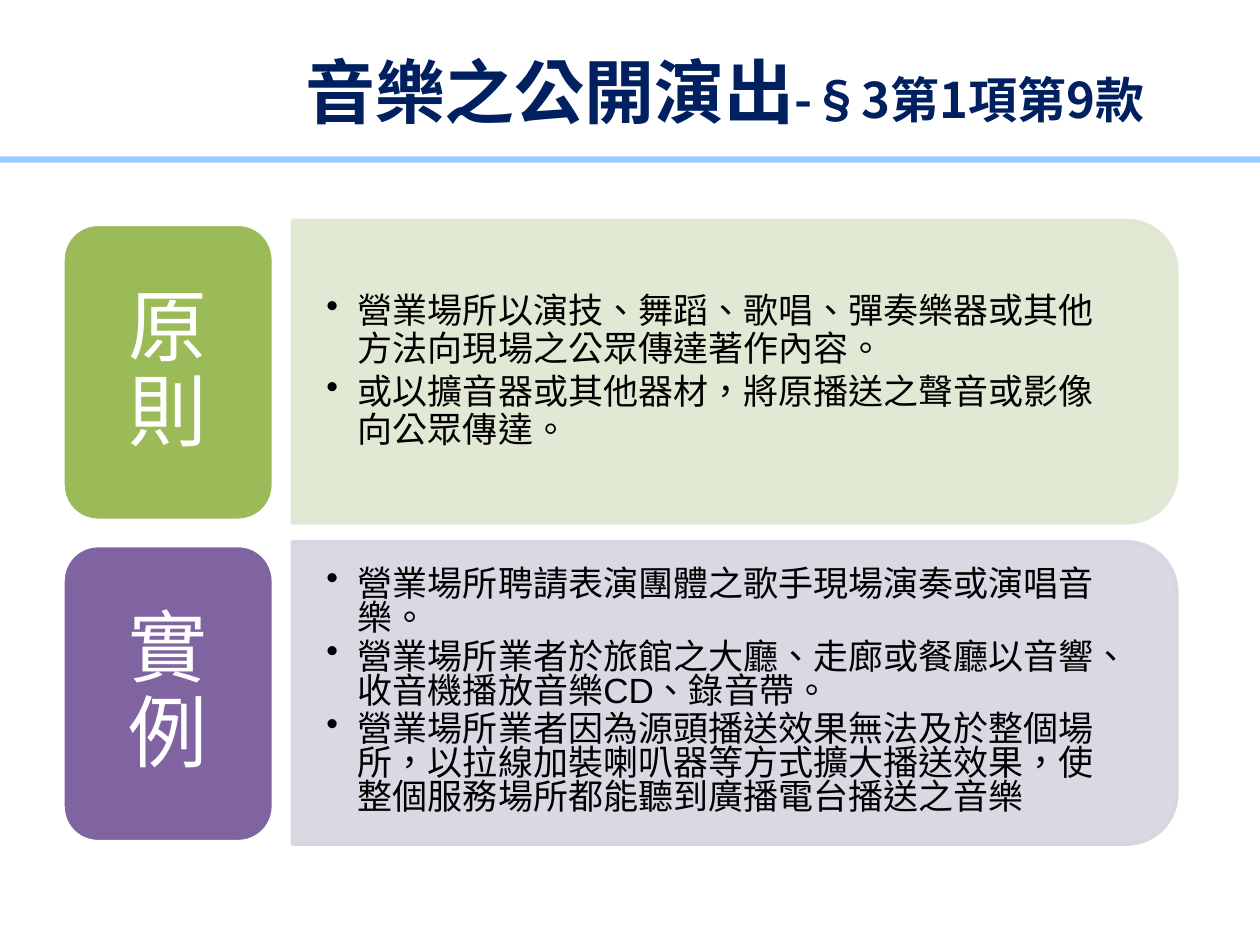
from lxml.etree import SubElement
from pptx import Presentation
from pptx.dml.color import RGBColor
from pptx.enum.lang import MSO_LANGUAGE_ID
from pptx.enum.shapes import MSO_SHAPE
from pptx.enum.text import MSO_ANCHOR, PP_ALIGN
from pptx.oxml.ns import qn
from pptx.util import Inches, Pt

HUES = {
    "navy": "002060", "sky": "99CCFF", "white": "FFFFFF", "black": "000000",
    "green": "9BBB59", "mint": "DEE7D1", "purple": "8064A2", "lilac": "D8D3E0",
}
TITLE = [("音樂之公開演出", 40), ("-§3第1項第9款", 28)]
ROWS = [
    ("原則", "green", "mint", 0.9, [
        "營業場所以演技、舞蹈、歌唱、彈奏樂器或其他方法向現場之公眾傳達著作內容。",
        "或以擴音器或其他器材，將原播送之聲音或影像向公眾傳達。",
    ]),
    ("實例", "purple", "lilac", 0.8, [
        "營業場所聘請表演團體之歌手現場演奏或演唱音樂。",
        "營業場所業者於旅館之大廳、走廊或餐廳以音響、收音機播放音樂CD、錄音帶。",
        "營業場所業者因為源頭播送效果無法及於整個場所，以拉線加裝喇叭器等方式擴大播送效果，使整個服務場所都能聽到廣播電台播送之音樂",
    ]),
]
TOP, STEP = 1.78, 2.55


def apply(item, form):
    for name, value in form.items():
        setattr(item, name, value)


def color(name):
    return RGBColor.from_string(HUES[name])


def place(item, box):
    apply(item, dict(zip(("left", "top", "width", "height"), map(Inches, box))))


def paint(part, name, alpha):
    part.solid()
    part.fore_color.rgb = color(name)
    if alpha < 100:
        tint = part._xPr.find(qn("a:solidFill"))[0]
        SubElement(tint, qn("a:alpha"), val=str(alpha * 1000))


def add_form(slide, kind, box, fill, edge=None, alpha=100, turn=0):
    form = slide.shapes.add_shape(kind, *map(Inches, box))
    form.shadow.inherit = False
    form.rotation = turn
    paint(form.fill, fill, alpha)
    if edge:
        paint(form.line.fill, edge, alpha)
        form.line.width = Pt(2)
    else:
        form.line.fill.background()


def add_text(slide, box, inset, lines, size, hue, para, dot=False):
    frame = slide.shapes.add_textbox(*map(Inches, box)).text_frame
    wide, high = map(Inches, inset)
    apply(frame, {
        "word_wrap": True, "vertical_anchor": MSO_ANCHOR.MIDDLE,
        "margin_left": wide, "margin_right": wide,
        "margin_top": high, "margin_bottom": high,
    })
    for i, line in enumerate(lines):
        item = frame.add_paragraph() if i else frame.paragraphs[0]
        apply(item, para)
        if dot:
            props = item._p.get_or_add_pPr()
            props.set("marL", str(Inches(0.25)))
            props.set("indent", str(-Inches(0.25)))
            SubElement(props, qn("a:buChar"), char="•")
        run = item.add_run()
        run.text = line
        apply(run.font, {
            "name": "Arial", "size": Pt(size),
            "language_id": MSO_LANGUAGE_ID.TRADITIONAL_CHINESE,
        })
        run.font.color.rgb = color(hue)


def add_title(slide):
    title = slide.shapes.title
    place(title, (1.5, 0.21, 8.5, 1.02))
    frame = title.text_frame
    apply(frame, {"word_wrap": True, "vertical_anchor": MSO_ANCHOR.MIDDLE})
    item = frame.paragraphs[0]
    item.alignment = PP_ALIGN.CENTER
    for text, size in TITLE:
        run = item.add_run()
        run.text = text
        apply(run.font, {
            "name": "Noto Sans CJK SC", "size": Pt(size), "bold": True,
            "language_id": MSO_LANGUAGE_ID.TRADITIONAL_CHINESE,
        })
        run.font.color.rgb = color("navy")
        SubElement(run.font._rPr, qn("a:ea"), typeface="Noto Sans CJK SC")


def add_row(slide, top, label, dark, pale, space, lines):
    add_form(slide, MSO_SHAPE.ROUND_2_SAME_RECTANGLE,
             (4.63, top - 2.34, 2.4, 7.02), pale, pale, 90, 90)
    add_text(slide, (2.32, top + 0.09, 6.9, 2.16), (0.27, 0.14), lines, 20, "black",
             {"level": 1, "line_spacing": space, "space_after": Pt(3)}, True)
    add_form(slide, MSO_SHAPE.ROUNDED_RECTANGLE, (0.5, top, 1.67, 2.35), dark, "white")
    add_text(slide, (0.58, top + 0.08, 1.5, 2.19), (0.19, 0.09), [label], 45, "white",
             {"alignment": PP_ALIGN.CENTER, "line_spacing": 0.9, "space_after": Pt(16)})


def main():
    deck = Presentation()
    apply(deck, {"slide_width": Inches(10), "slide_height": Inches(7.5)})
    slide = deck.slides.add_slide(deck.slide_layouts[5])
    add_form(slide, MSO_SHAPE.RECTANGLE, (-0.04, 1.24, 10.06, 0.05), "sky")
    add_title(slide)
    for i, row in enumerate(ROWS):
        add_row(slide, TOP + i * STEP, *row)
    deck.save("out.pptx")


if __name__ == "__main__":
    main()
